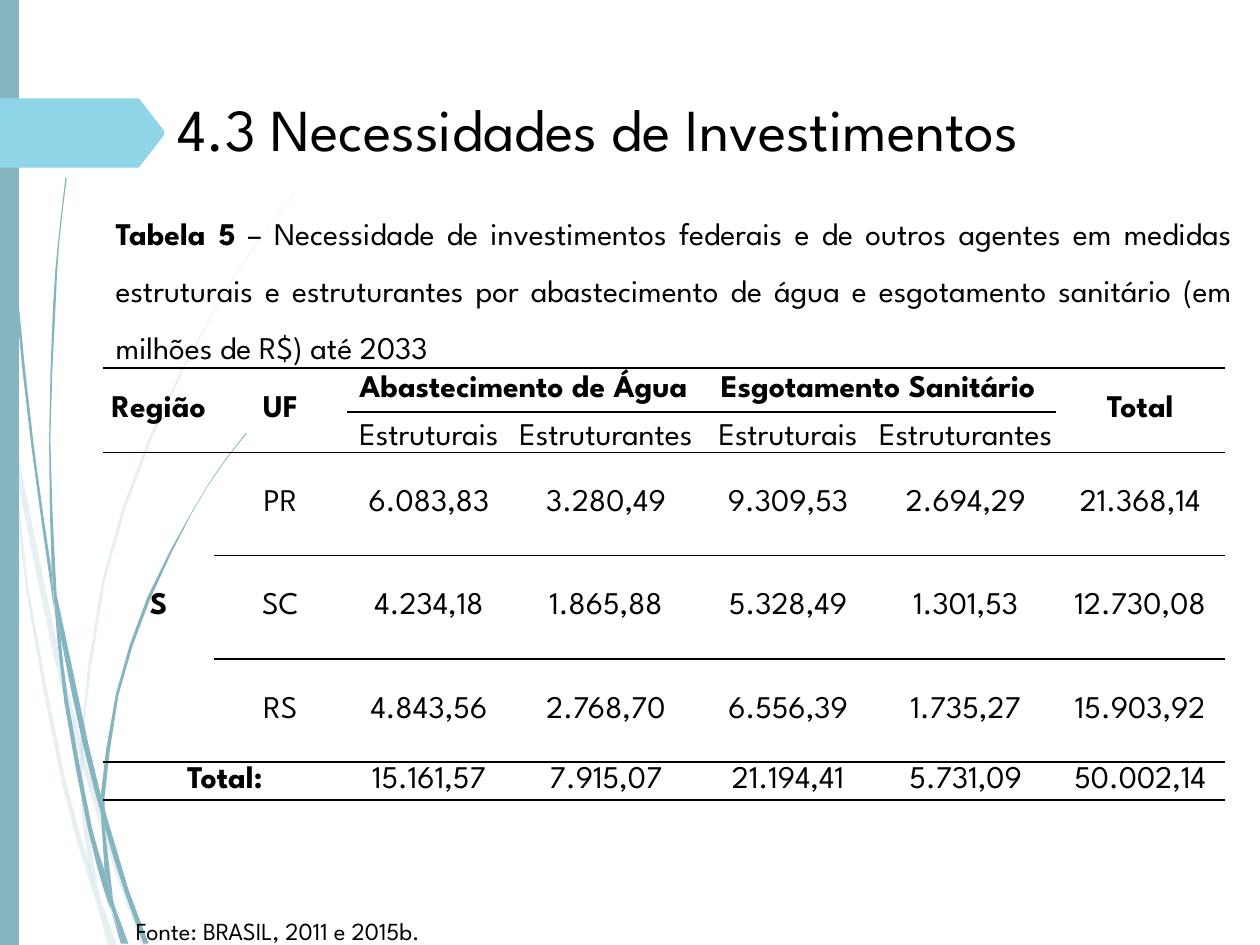
from lxml import etree
from pptx import Presentation
from pptx.dml.color import RGBColor
from pptx.enum.shapes import MSO_SHAPE
from pptx.enum.text import MSO_ANCHOR as Anchor, MSO_AUTO_SIZE as AutoSize, PP_ALIGN as Align
from pptx.oxml.ns import qn
from pptx.util import Inches, Pt

FONT = "League Spartan"
BLACK, WHITE, TEAL, CYAN = "000000", "FFFFFF", "86B5C2", "8ED6E7"

# Each blade of grass is a pair of edges: one followed down, the other back up
PALE_BLADES = [
    ([(0, 2.82), (0, 2.99), (0.08, 3.44), (0.08, 3.5)], [(0.06, 3.22)]),
    ([(0.11, 3.45), (0.13, 3.76), (0.43, 5.22), (0.63, 5.99)],
     [(0.64, 5.86), (0.47, 5.2), (0.11, 3.45)]),
    ([(0.66, 5.96), (0.66, 6.1), (0.92, 6.94), (1.13, 7.51)],
     [(1.16, 7.51), (0.95, 6.92), (0.69, 6.07)]),
    ([(0.79, 7.11), (0.89, 7.51)], [(0.93, 7.51)]),
    ([(0.08, 3.5), (0.21, 4.7), (0.49, 6.21), (0.69, 6.93), (0.76, 7.14)],
     [(0.74, 7.07), (0.7, 6.83), (0.52, 6.19), (0.23, 4.69), (0.13, 3.76), (0.08, 3.5)]),
    ([(0.63, 5.99), (0.65, 6.46), (0.7, 6.83), (0.72, 6.92), (0.79, 7.11)],
     [(0.78, 7.06), (0.68, 6.46), (0.66, 6.1)]),
    ([(2.34, 1.53), (2.17, 1.75), (2.01, 1.97), (1.71, 2.44), (1.18, 3.48), (0.81, 4.61),
      (0.64, 5.84), (0.66, 5.96)],
     [(0.66, 5.84), (0.83, 4.62), (1.2, 3.49), (1.71, 2.45), (2.01, 1.98), (2.17, 1.75),
      (2.34, 1.54)]),
    ([(0.76, 7.14), (0.86, 7.51)], [(0.89, 7.51)]),
    ([(0.64, 5.86), (0.63, 5.99), (0.66, 6.1)], [(0.66, 5.96)]),
    ([(0.7, 6.83), (0.74, 7.07), (0.76, 7.14), (0.89, 7.51)], [(0.79, 7.11), (0.72, 6.92)]),
]
DARK_BLADES = [
    ([(0.02, 0), (0.03, 0.48), (0.05, 1.1), (0.12, 2.33), (0.25, 3.55), (0.42, 4.77), (0.43, 4.81)],
     [(0.41, 4.53), (0.27, 3.55), (0.14, 2.32), (0.06, 1.09), (0.03, 0.48), (0.03, 0)]),
    ([(0.45, 4.72), (0.48, 5.05), (0.66, 5.92), (0.8, 6.45)],
     [(0.8, 6.31), (0.7, 5.9), (0.45, 4.72)]),
    ([(0.83, 6.41), (0.83, 6.56), (0.99, 7.08), (1.14, 7.49)],
     [(1.18, 7.49), (1.02, 7.06), (0.85, 6.49)]),
    ([(0.43, 4.77), (0.51, 5.57), (0.7, 6.59), (0.83, 7.08), (0.88, 7.22)],
     [(0.87, 7.17), (0.83, 6.91), (0.73, 6.57), (0.54, 5.56), (0.48, 5.05), (0.43, 4.77)]),
    ([(0.52, 1.41), (0.46, 1.93), (0.42, 2.45), (0.39, 3.49), (0.41, 4.49), (0.45, 4.72)],
     [(0.44, 4.53), (0.4, 3.49), (0.44, 2.45), (0.47, 1.93), (0.53, 1.41)]),
    ([(0.91, 7.19), (1, 7.49)], [(1.02, 7.49)]),
    ([(0.41, 4.49), (0.43, 4.77), (0.48, 5.05)], [(0.45, 4.72)]),
    ([(1.95, 3.44), (1.84, 3.58), (1.73, 3.73), (1.53, 4.05), (1.17, 4.74), (0.92, 5.51),
      (0.8, 6.31), (0.83, 6.41)],
     [(0.83, 6.33), (0.94, 5.52), (1.19, 4.76), (1.53, 4.06), (1.73, 3.74), (1.84, 3.59),
      (1.96, 3.44)]),
    ([(0.88, 7.22), (0.96, 7.49)], [(0.98, 7.49)]),
    ([(0.8, 6.45), (0.83, 6.91), (0.91, 7.19)], [(0.9, 7.16), (0.83, 6.56)]),
    ([(0.8, 6.31), (0.8, 6.45), (0.83, 6.56)], [(0.83, 6.41)]),
    ([(0.83, 6.91), (0.87, 7.17), (0.98, 7.49)], [(1, 7.49), (0.91, 7.19)]),
]

COLUMNS = [0.88, 1.05, 1.31, 1.5, 1.39, 1.43, 1.34]
ROWS = [0.35, 0.32, 0.82, 0.82, 0.82, 0.27]
CELLS = [
    ["Região", "UF", "Abastecimento de Água", "", "Esgotamento Sanitário", "", "Total"],
    ["", "", "Estruturais", "Estruturantes", "Estruturais", "Estruturantes", ""],
    ["S", "PR", "6.083,83", "3.280,49", "9.309,53", "2.694,29", "21.368,14"],
    ["", "SC", "4.234,18", "1.865,88", "5.328,49", "1.301,53", "12.730,08"],
    ["", "RS", "4.843,56", "2.768,70", "6.556,39", "1.735,27", "15.903,92"],
    ["Total:", "", "15.161,57", "7.915,07", "21.194,41", "5.731,09", "50.002,14"],
]
MERGES = [(0, 0, 1, 0), (0, 1, 1, 1), (0, 2, 0, 3), (0, 4, 0, 5), (0, 6, 1, 6),
          (2, 0, 4, 0), (5, 0, 5, 1)]
# Columns ruled at each horizontal edge of the grid, from top to bottom
RULES = [range(7), range(2, 6), range(7), range(1, 7), range(1, 7), range(7), range(7)]


def color(value):
    return RGBColor.from_string(value)


def paint(shape, fill, opacity=None):
    shape.shadow.inherit = False
    shape.fill.solid()
    shape.fill.fore_color.rgb = color(fill)
    shape.line.fill.background()
    if opacity:
        tint = shape.fill._xPr.find(".//" + qn("a:srgbClr"))
        etree.SubElement(tint, qn("a:alpha"), val=str(opacity * 1000))


def add_run(paragraph, text, size, bold=False):
    run = paragraph.add_run()
    run.text = text
    run.font.name, run.font.size, run.font.bold = FONT, Pt(size), bold
    run.font.color.rgb = color(BLACK)


def smooth(points):
    """Add the Catmull-Rom midpoint between neighbouring points of a long edge."""
    if len(points) < 4:
        return points
    ends = [points[0], *points, points[-1]]
    curve = [points[0]]
    for a, b, c, d in zip(ends, ends[1:], ends[2:], ends[3:]):
        curve += [tuple((9 * (q + r) - p - s) / 16 for p, q, r, s in zip(a, b, c, d)), c]
    return curve


def add_outline(shapes, points):
    corners = [(Inches(x), Inches(y)) for x, y in points]
    builder = shapes.build_freeform(*corners[0], scale=1.0)
    builder.add_line_segments(corners[1:], close=True)
    return builder.convert_to_shape()


def add_grass(slide, blades, opacity=None):
    group = slide.shapes.add_group_shape()
    for down, up in blades:
        paint(add_outline(group.shapes, smooth(down) + smooth(up)), TEAL, opacity)


def add_side_decoration(slide, left, top, width, height):
    add_grass(slide, PALE_BLADES, opacity=20)
    add_grass(slide, DARK_BLADES)
    bar = slide.shapes.add_shape(MSO_SHAPE.RECTANGLE, Inches(left), Inches(top),
                                 Inches(width), Inches(height))
    paint(bar, TEAL)


def add_arrow_tab(slide, left, top, width, height):
    right, bottom, middle = left + width, top + height, top + height / 2
    shoulder = right - 0.2
    paint(add_outline(slide.shapes, [
        (left, top), (shoulder, top), (shoulder + 0.01, top + 0.01), (right, middle - 0.02),
        (right, middle + 0.02), (shoulder + 0.01, bottom - 0.01), (shoulder, bottom),
        (left, bottom)]), CYAN)


def add_title(slide, left, top, width, height):
    title = slide.shapes.title
    title.left, title.top, title.width, title.height = map(Inches, (left, top, width, height))
    frame = title.text_frame
    frame.auto_size, frame.vertical_anchor = AutoSize.NONE, Anchor.TOP
    frame.paragraphs[0].alignment = Align.LEFT
    add_run(frame.paragraphs[0], "4.3 Necessidades de Investimentos", 34)


def add_text(slide, left, top, width, height, runs, size, spacing=1.0):
    box = slide.shapes.add_textbox(*map(Inches, (left, top, width, height)))
    box.text_frame.word_wrap = True
    paragraph = box.text_frame.paragraphs[0]
    paragraph.alignment = Align.JUSTIFY
    paragraph.line_spacing, paragraph.space_before = spacing, Pt(10)
    for text, bold in runs:
        add_run(paragraph, text, size, bold)


def set_borders(cell, top, bottom):
    properties = cell._tc.get_or_add_tcPr()
    for tag, ruled in (("lnL", False), ("lnR", False), ("lnT", top), ("lnB", bottom)):
        line = etree.SubElement(properties, qn("a:" + tag), w=str(Pt(1)))
        fill = etree.SubElement(line, qn("a:solidFill" if ruled else "a:noFill"))
        if ruled:
            etree.SubElement(fill, qn("a:srgbClr"), val=BLACK)


def fill_cell(cell, text, bold, anchor):
    cell.fill.background()
    cell.margin_left = cell.margin_right = Inches(0.02)
    cell.margin_top = cell.margin_bottom = 0
    cell.vertical_anchor = anchor
    paragraph = cell.text_frame.paragraphs[0]
    paragraph.alignment, paragraph.line_spacing = Align.CENTER, 1.0
    if text:
        add_run(paragraph, text, 18, bold)
    # The paragraph end takes the same font, so that it does not stretch the row
    ending = etree.SubElement(paragraph._p, qn("a:endParaRPr"), sz="1800" if text else "1000")
    etree.SubElement(ending, qn("a:latin"), typeface=FONT)


def add_investment_table(slide, left, top, height):
    frame = slide.shapes.add_table(len(ROWS), len(COLUMNS), Inches(left), Inches(top),
                                   Inches(sum(COLUMNS)), Inches(height))
    table = frame.table
    table.first_row = table.horz_banding = False
    for column, width in zip(table.columns, COLUMNS):
        column.width = Inches(width)
    for r, texts in enumerate(CELLS):
        table.rows[r].height = Inches(ROWS[r])
        for c, text in enumerate(texts):
            cell = table.cell(r, c)
            set_borders(cell, c in RULES[r], c in RULES[r + 1])
            fill_cell(cell, text, r == 0 or c == 0, Anchor.BOTTOM if r == 1 else Anchor.MIDDLE)
    for r1, c1, r2, c2 in MERGES:
        table.cell(r1, c1).merge(table.cell(r2, c2))
    frame.height = Inches(height)


def main():
    presentation = Presentation()
    presentation.slide_width, presentation.slide_height = Inches(10), Inches(7.5)
    slide = presentation.slides.add_slide(presentation.slide_layouts[5])
    slide.background.fill.solid()
    slide.background.fill.fore_color.rgb = color(WHITE)
    # Decoration, then heading
    add_side_decoration(slide, 0, 0, 0.15, 7.5)
    add_arrow_tab(slide, 0, 0.78, 1.3, 0.55)
    add_title(slide, 1.31, 0.68, 8.45, 1.4)
    # Caption, table and source note
    add_text(slide, 0.82, 1.5, 9.06, 1.49, [
        ("Tabela 5", True),
        (" – Necessidade de investimentos federais e de outros agentes em medidas estruturais e "
         "estruturantes por abastecimento de água e esgotamento sanitário (em milhões de R$) "
         "até 2033", False)], 18, spacing=1.5)
    add_investment_table(slide, 0.82, 2.92, 4.17)
    add_text(slide, 0.98, 7.22, 8.74, 0.5, [("Fonte: BRASIL, 2011 e 2015b.", False)], 14)
    presentation.save("out.pptx")


if __name__ == "__main__":
    main()
